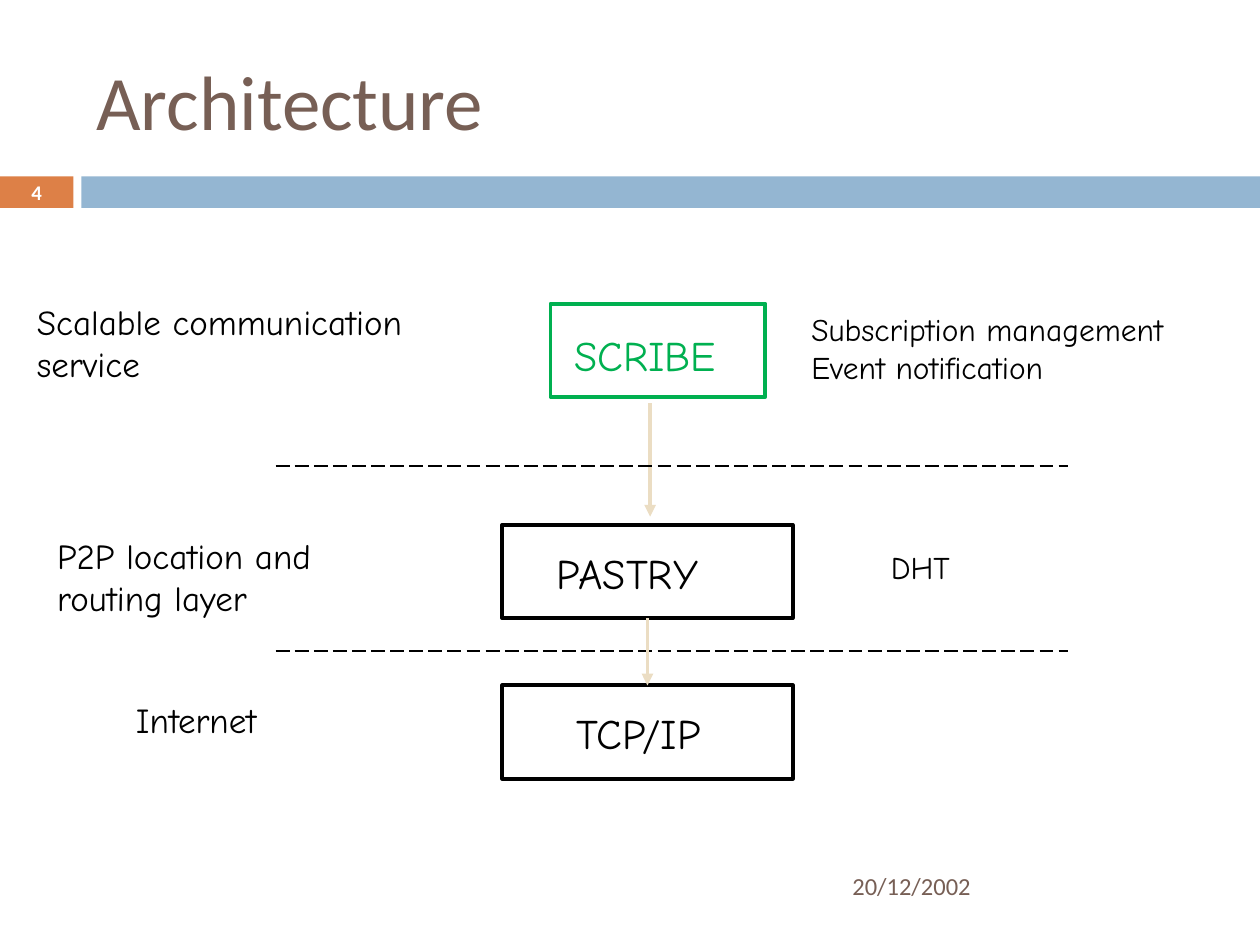
from pptx import Presentation
from pptx import util as u
from pptx.dml import color
from pptx.enum import dml, shapes, text
from pptx.oxml import ns, xmlchemy

BODY = "Comic Neue"
HEAD = "Calibri"
BLACK = "000000"
BROWN = "775F55"
GREEN = "00B050"
SAND = "EBDDC3"


def rgb(code):
    return color.RGBColor.from_string(code)


def points(*nums):
    return [u.Pt(n) for n in nums]


def box(slide, area, fill=None, edge=None):
    rect = slide.shapes.add_shape(shapes.MSO_SHAPE.RECTANGLE, *points(*area))
    rect.shadow.inherit = False
    if fill:
        rect.fill.solid()
        rect.fill.fore_color.rgb = rgb(fill)
    else:
        rect.fill.background()
    if edge:
        rect.line.color.rgb = rgb(edge)
        rect.line.width = u.Pt(2.25)
    else:
        rect.line.fill.background()
    return rect


def label(slide, area, words, size=20, font=BODY, tint=BLACK, bold=False,
          align=text.PP_ALIGN.LEFT, anchor=text.MSO_ANCHOR.TOP, wrap=False):
    frame = slide.shapes.add_textbox(*points(*area)).text_frame
    frame.word_wrap = wrap
    frame.vertical_anchor = anchor
    frame.text = words
    for para in frame.paragraphs:
        para.alignment = align
        for run in para.runs:
            run.font.size = u.Pt(size)
            run.font.name = font
            run.font.bold = bold
            run.font.color.rgb = rgb(tint)


def line(slide, ends, tint, width):
    link = slide.shapes.add_connector(
        shapes.MSO_CONNECTOR.STRAIGHT, *points(*ends))
    link.line.color.rgb = rgb(tint)
    link.line.width = u.Pt(width)
    props = link._element.spPr
    props.append(xmlchemy.OxmlElement("a:effectLst"))
    return link


def arrow(slide, ends):
    link = line(slide, ends, SAND, 2.25)
    tip = xmlchemy.OxmlElement("a:tailEnd")
    tip.set("type", "triangle")
    link._element.spPr.find(ns.qn("a:ln")).append(tip)
    return link


def divide(slide, y):
    rule = line(slide, (157.5, y, 610.5, y), BLACK, 1)
    rule.line.dash_style = dml.MSO_LINE.LONG_DASH


def frame(slide):
    mid = text.MSO_ANCHOR.MIDDLE
    box(slide, (0, 100.8, 42, 18), fill="DD8047")
    box(slide, (46.5, 100.8, 673.5, 18), fill="94B6D2")
    label(slide, (48, 18, 642, 78), "Architecture", size=44, font=HEAD,
          tint=BROWN, anchor=mid, wrap=True)
    label(slide, (480, 492, 210, 28.8), "20/12/2002", size=14, font=HEAD,
          tint=BROWN, anchor=mid, wrap=True)
    label(slide, (0, 100, 42, 19.5), "4", size=11.9, font=HEAD,
          tint="FFFFFF", bold=True, align=text.PP_ALIGN.CENTER,
          anchor=mid, wrap=True)


def stack(slide):
    net = box(slide, (287, 391.7, 166, 53.3), edge=BLACK)
    label(slide, (322.5, 401, 96, 36), "TCP/IP", size=24)
    divide(slide, 372)
    pastry = box(slide, (287, 300, 166, 53.3), edge=BLACK)
    label(slide, (311, 309.6, 108, 36), "PASTRY", size=24)
    link = arrow(slide, (370, 353.3, 370, 391.7))
    link.begin_connect(pastry, 2)
    link.end_connect(net, 0)
    arrow(slide, (371.5, 230.4, 371.5, 295.2))
    divide(slide, 266.4)
    box(slide, (314.6, 173.5, 122.8, 53.3), edge=GREEN)
    label(slide, (321, 185, 111, 36), "SCRIBE", size=24, tint=GREEN)


def notes(slide):
    label(slide, (14, 168, 234, 55.5), "Scalable communication\nservice")
    label(slide, (25.5, 302, 170.5, 55.5), "P2P location and\nrouting layer")
    label(slide, (70.6, 395.5, 96.5, 31), "Internet")
    label(slide, (456.5, 173.5, 229, 50.5),
          "Subscription management\nEvent notification", size=18)
    label(slide, (502, 309.6, 53.3, 28.8), "DHT", size=18)


def main():
    deck = Presentation()
    deck.slide_width, deck.slide_height = points(720, 540)
    slide = deck.slides.add_slide(deck.slide_layouts[6])
    frame(slide)
    stack(slide)
    notes(slide)
    deck.save("out.pptx")


if __name__ == "__main__":
    main()
